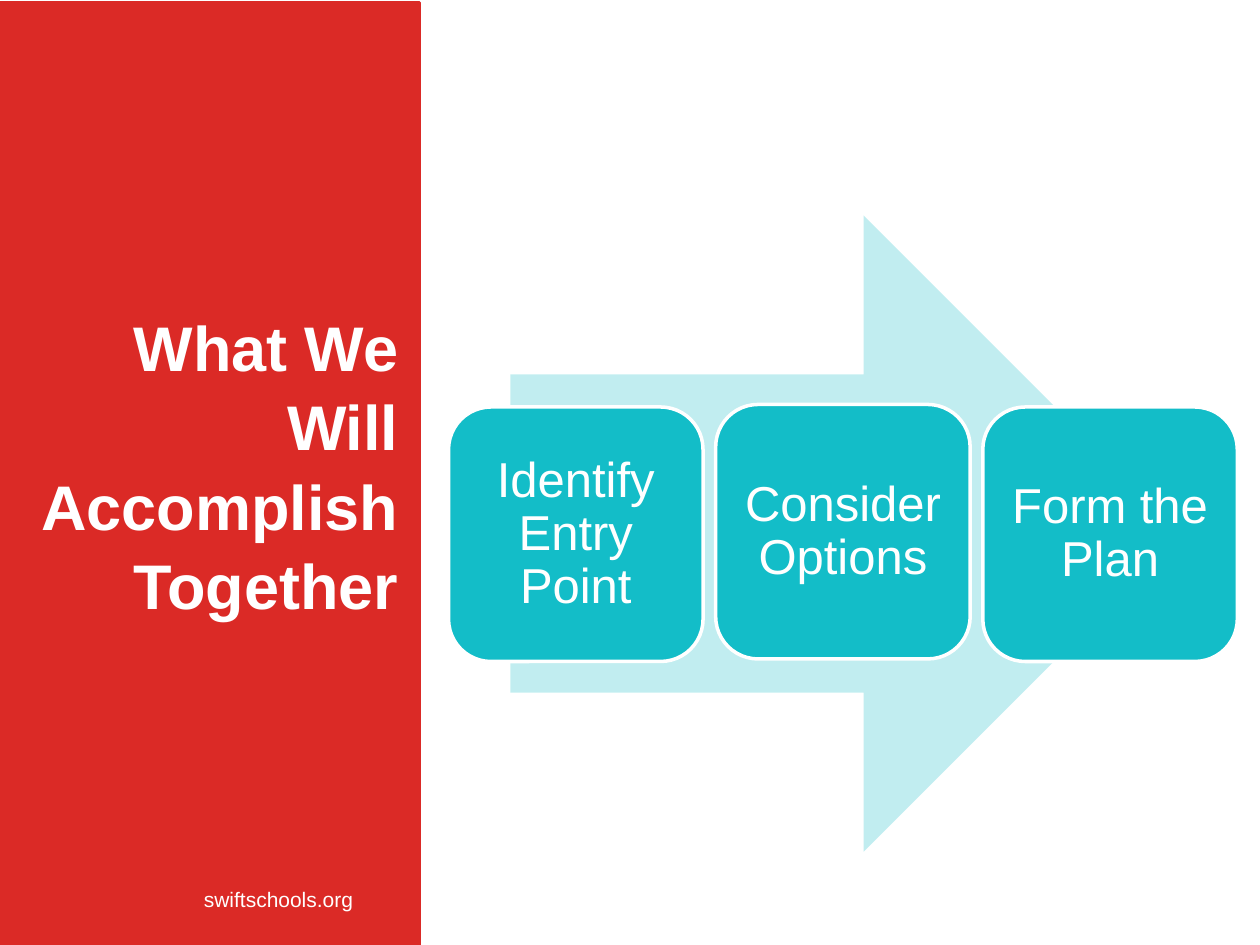
"""Build the slide that shows what the group will accomplish together."""
from lxml.etree import SubElement
from pptx import Presentation
from pptx.dml.color import RGBColor
from pptx.enum.shapes import MSO_SHAPE
from pptx.enum.text import MSO_ANCHOR, PP_ALIGN
from pptx.oxml.ns import qn
from pptx.util import Inches, Pt

COLORS = {"red": "DB2A26", "teal": "13BDC8", "white": "FFFFFF"}
STEPS = [("Identify Entry Point", 3.23), ("Consider Options", 3.21), ("Form the Plan", 3.23)]
STEP_LEFT, STEP_PITCH, STEP_SIZE = 3.56, 2.12, 2.02


def color(name):
    return RGBColor.from_string(COLORS[name])


def add_filled(page, kind, left, top, width, height, fill, line=None):
    shape = page.shapes.add_shape(kind, Inches(left), Inches(top), Inches(width), Inches(height))
    shape.shadow.inherit = False
    shape.fill.solid()
    shape.fill.fore_color.rgb = color(fill)
    if line:
        shape.line.color.rgb = color(line)
        shape.line.width = Pt(2)
    else:
        shape.line.fill.background()
    return shape


def write(shape, text, size, align, bold=False, spacing=1.0):
    frame = shape.text_frame
    frame.word_wrap = True
    frame.text = text
    para = frame.paragraphs[0]
    para.alignment = align
    para.line_spacing = spacing
    font = para.runs[0].font
    font.name, font.size, font.bold = "Arial", Pt(size), bold
    font.color.rgb = color("white")


def add_label(page, left, top, width, height, text, size, align, **style):
    box = page.shapes.add_textbox(Inches(left), Inches(top), Inches(width), Inches(height))
    write(box, text, size, align, **style)


def add_arrow(page):
    arrow = add_filled(page, MSO_SHAPE.RIGHT_ARROW, 4.05, 1.71, 5.33, 5.05, "teal")
    tint = arrow.fill._xPr.find(qn("a:solidFill"))[0]
    SubElement(tint, qn("a:alpha"), val="26000")


def add_step(page, left, top, text):
    tile = add_filled(page, MSO_SHAPE.ROUNDED_RECTANGLE, left, top, STEP_SIZE, STEP_SIZE, "teal", "white")
    write(tile, text, 28, PP_ALIGN.CENTER, spacing=0.9)
    frame = tile.text_frame
    frame.vertical_anchor = MSO_ANCHOR.MIDDLE
    frame.margin_left = frame.margin_right = Inches(0.12)
    frame.margin_top = frame.margin_bottom = Inches(0.12)


def main():
    deck = Presentation()
    deck.slide_width, deck.slide_height = Inches(10), Inches(7.5)
    page = deck.slides.add_slide(deck.slide_layouts[6])
    add_filled(page, MSO_SHAPE.RECTANGLE, 0, 0.02, 3.33, 7.5, "red", "red")
    add_label(page, 1.52, 6.99, 1.74, 0.3, "swiftschools.org", 12, PP_ALIGN.LEFT)
    add_label(page, 0.07, 2.37, 3.19, 2.52, "What We Will Accomplish Together", 36,
              PP_ALIGN.RIGHT, bold=True, spacing=1.05)
    add_arrow(page)
    for index, (text, top) in enumerate(STEPS):
        add_step(page, STEP_LEFT + index * STEP_PITCH, top, text)
    deck.save("out.pptx")


if __name__ == "__main__":
    main()
